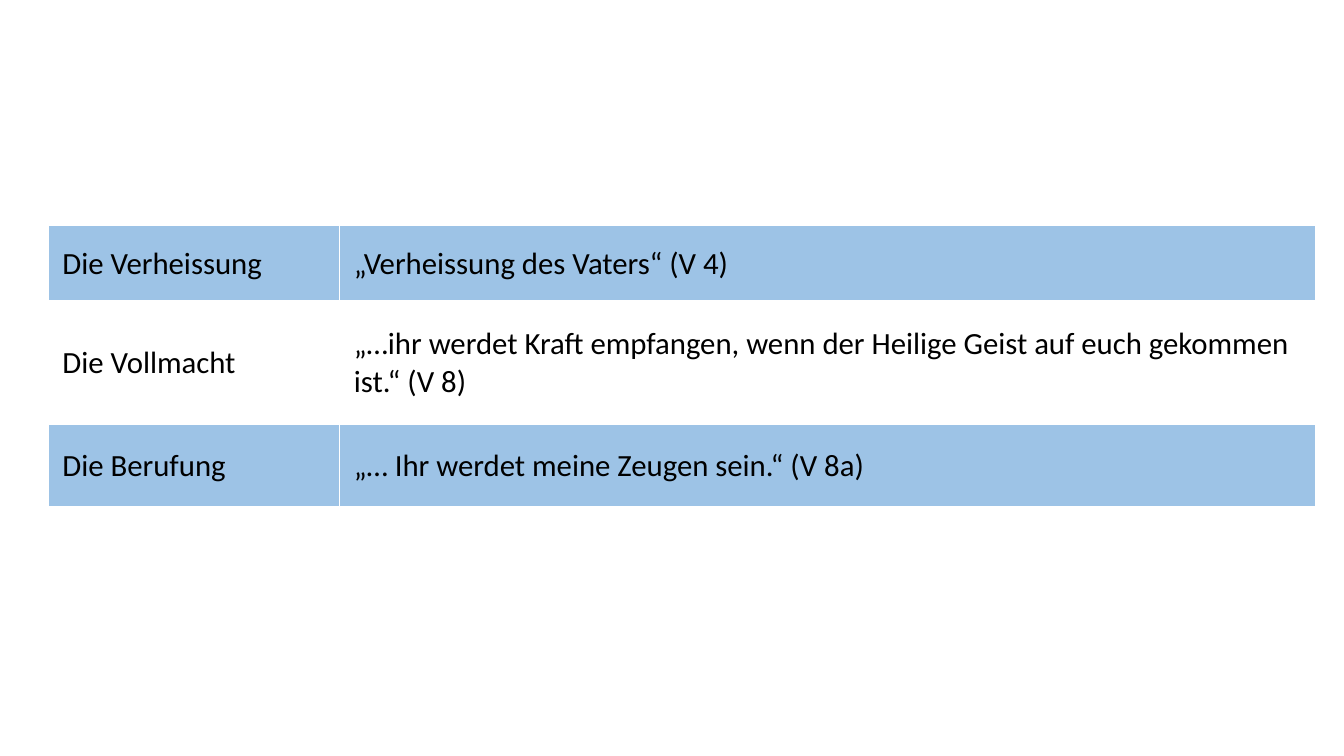
from dataclasses import dataclass

from lxml.etree import SubElement
from pptx import Presentation
from pptx.dml.color import RGBColor
from pptx.enum.text import MSO_ANCHOR
from pptx.oxml.ns import qn
from pptx.util import Inches, Pt


@dataclass(frozen=True)
class Theme:
    font: str = "Calibri"
    size: int = 22
    ink: str = "000000"
    band: str = "9DC3E6"
    paper: str = "FFFFFF"
    rule: float = 1
    header_rule: float = 3


class SlideBuilder:
    def __init__(self, slide, theme):
        self.slide = slide
        self.theme = theme

    def apply(self, target, formats):
        for name, value in formats.items():
            setattr(target, name, value)

    def border(self, cell, widths):
        properties = cell._tc.get_or_add_tcPr()
        for side, width in widths.items():
            line = SubElement(properties, qn(f"a:ln{side}"), w=str(Pt(width)))
            fill = SubElement(line, qn("a:solidFill"))
            SubElement(fill, qn("a:srgbClr"), val=self.theme.paper)

    def cell(self, cell, wording, row):
        theme = self.theme
        self.apply(cell, {
            "text": wording,
            "vertical_anchor": MSO_ANCHOR.MIDDLE,
            "margin_left": Inches(0.14),
            "margin_right": Inches(0.14),
            "margin_top": 0,
            "margin_bottom": 0,
        })
        font = cell.text_frame.paragraphs[0].runs[0].font
        self.apply(font, {"name": theme.font, "size": Pt(theme.size), "bold": False})
        font.color.rgb = RGBColor.from_string(theme.ink)
        self.border(cell, {
            "L": theme.rule,
            "R": theme.rule,
            "T": theme.header_rule if row == 1 else theme.rule,
            "B": theme.header_rule if row == 0 else theme.rule,
        })
        cell.fill.solid()
        cell.fill.fore_color.rgb = RGBColor.from_string(
            theme.paper if row % 2 else theme.band)

    def table(self, left, top, widths, heights, rows):
        table = self.slide.shapes.add_table(
            len(heights), len(widths), Inches(left), Inches(top),
            Inches(sum(widths)), Inches(sum(heights))).table
        self.apply(table, {"first_row": False, "horz_banding": False})
        for column, width in zip(table.columns, widths):
            column.width = Inches(width)
        for row, height in zip(table.rows, heights):
            row.height = Inches(height)
        for row, wordings in enumerate(rows):
            for column, wording in enumerate(wordings):
                self.cell(table.cell(row, column), wording, row)


def main():
    presentation = Presentation()
    presentation.slide_width = Inches(13.33)
    presentation.slide_height = Inches(7.5)
    slide = presentation.slides.add_slide(presentation.slide_layouts[6])
    promises = [
        ("Die Verheissung", "„Verheissung des Vaters“ (V 4)"),
        ("Die Vollmacht", "„…ihr werdet Kraft empfangen, wenn der Heilige Geist "
                          "auf euch gekommen ist.“ (V 8)"),
        ("Die Berufung", "„… Ihr werdet meine Zeugen sein.“ (V 8a)"),
    ]
    SlideBuilder(slide, Theme()).table(
        0.48, 2.24, [2.89, 9.68], [0.75, 1.22, 0.82], promises)
    presentation.save("out.pptx")


if __name__ == "__main__":
    main()
